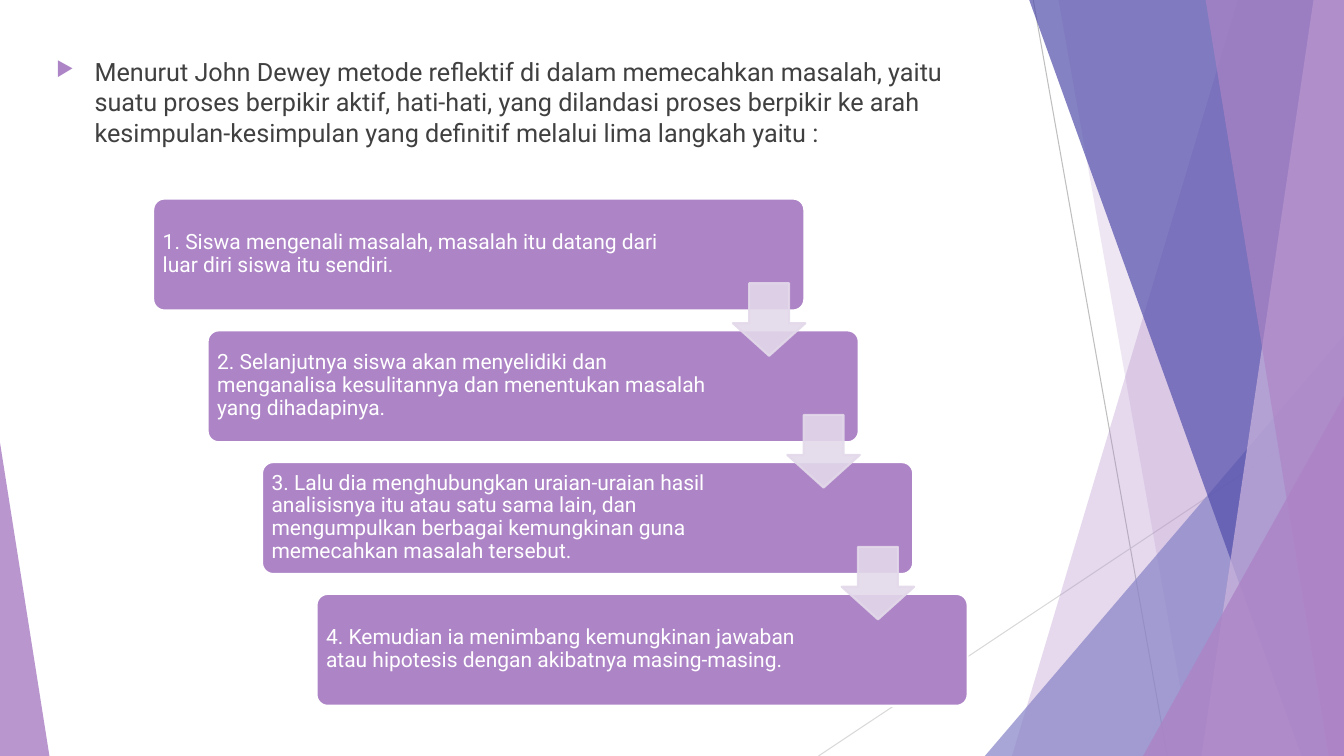
from dataclasses import dataclass

from lxml import etree
from pptx import Presentation
from pptx import util as u
from pptx.dml.color import RGBColor
from pptx.enum import shapes, text
from pptx.oxml.ns import qn

PURPLE = RGBColor(0xAD, 0x84, 0xC6)
PALE_PURPLE = RGBColor(0xCE, 0xB5, 0xDD)
PERIWINKLE = RGBColor(0x87, 0x84, 0xC7)
INDIGO = RGBColor(0x52, 0x4E, 0xAB)
LILAC = RGBColor(0xE3, 0xD9, 0xEA)
DARK_GRAY = RGBColor(0x40, 0x40, 0x40)
MID_GRAY = RGBColor(0xBF, 0xBF, 0xBF)
LIGHT_GRAY = RGBColor(0xD9, 0xD9, 0xD9)
WHITE = RGBColor(0xFF, 0xFF, 0xFF)
FONT = "Roboto"
WIDTH, HEIGHT = u.Inches(13.33), u.Inches(7.5)


@dataclass
class Box:
    """A rectangle in percent of the slide's width and height."""
    left: float
    top: float
    width: float
    height: float

    def moved(self, right: float, down: float) -> "Box":
        return Box(self.left + right, self.top + down, self.width, self.height)

    def emu(self) -> tuple:
        return (across(self.left), down_by(self.top),
                across(self.width), down_by(self.height))


@dataclass
class Band:
    """A facet reaching the right edge, with a slanted left side."""
    top_x: float
    bottom_x: float
    color: RGBColor
    opacity: int


@dataclass
class Corner:
    """A right triangle; the apex is 0 for the left side, 1 for the right."""
    box: Box
    apex: int
    color: RGBColor
    opacity: int


@dataclass
class Ray:
    start: tuple
    end: tuple
    color: RGBColor


RAYS = [
    Ray((76.88, 0), (86.85, 100), MID_GRAY),
    Ray((100, 53.73), (60.9, 100), LIGHT_GRAY),
]
FACETS = [
    Band(92.1, 75.3, PURPLE, 30),
    Band(78.75, 88.73, PURPLE, 20),
    Corner(Box(73.28, 44.4, 26.72, 55.6), 1, PERIWINKLE, 72),
    Band(76.58, 96.83, INDIGO, 70),
    Band(97.73, 89.4, PALE_PURPLE, 70),
    Band(89.7, 98.85, PURPLE, 65),
    Corner(Box(85.05, 52.4, 14.95, 47.6), 1, PURPLE, 80),
    Corner(Box(0, 58.53, 3.68, 41.47), 0, PURPLE, 85),
]
INTRO = ("Menurut John Dewey metode reflektif di dalam memecahkan masalah, yaitu "
         "suatu proses berpikir aktif, hati-hati, yang dilandasi proses berpikir ke arah "
         "kesimpulan-kesimpulan yang definitif melalui lima langkah yaitu :")
STEPS = [
    "1. Siswa mengenali masalah, masalah itu datang dari luar diri siswa itu sendiri.",
    "2. Selanjutnya siswa akan menyelidiki dan menganalisa kesulitannya dan "
    "menentukan masalah yang dihadapinya.",
    "3. Lalu dia menghubungkan uraian-uraian hasil analisisnya itu atau satu sama lain, "
    "dan mengumpulkan berbagai kemungkinan guna memecahkan masalah tersebut.",
    "4. Kemudian ia menimbang kemungkinan jawaban atau hipotesis dengan akibatnya "
    "masing-masing.",
]
INTRO_BOX = Box(3.45, 6.8, 70.5, 56.53)
CARD = Box(11.4, 26.27, 48.45, 14.8)
CARD_TEXT = Box(11.66, 26.67, 38.63, 13.87)
ARROW = Box(54.53, 37.47, 5.4, 9.6)
STEP_RIGHT, STEP_DOWN = 4.05, 17.43


def across(percent: float) -> int:
    return round(WIDTH * percent / 100)


def down_by(percent: float) -> int:
    return round(HEIGHT * percent / 100)


def paint(shape, color: RGBColor, opacity: int = 100, line: RGBColor = None) -> None:
    shape.shadow.inherit = False
    shape.fill.solid()
    shape.fill.fore_color.rgb = color
    if line is None:
        shape.line.fill.background()
    else:
        shape.line.color.rgb = line
        shape.line.width = u.Pt(1.5)
    if opacity < 100:
        for tint in shape._element.spPr.iter(qn("a:srgbClr")):
            etree.SubElement(tint, qn("a:alpha"), val=str(opacity * 1000))


def add_preset(slide, kind, box: Box, adjustments: list):
    shape = slide.shapes.add_shape(kind, *box.emu())
    for index, value in enumerate(adjustments):
        shape.adjustments[index] = value
    return shape


def add_ray(slide, ray: Ray) -> None:
    (x1, y1), (x2, y2) = ray.start, ray.end
    connector = slide.shapes.add_connector(
        shapes.MSO_CONNECTOR.STRAIGHT, across(x1), down_by(y1), across(x2), down_by(y2))
    connector.line.color.rgb = ray.color
    connector.line.width = u.Pt(0.75)
    etree.SubElement(connector._element.spPr, qn("a:effectLst"))


def add_facet(slide, facet) -> None:
    if isinstance(facet, Corner):
        shape = add_preset(slide, shapes.MSO_SHAPE.ISOSCELES_TRIANGLE, facet.box, [facet.apex])
    else:
        builder = slide.shapes.build_freeform(across(facet.top_x), 0)
        builder.add_line_segments(
            [(WIDTH, 0), (WIDTH, HEIGHT), (across(facet.bottom_x), HEIGHT)], close=True)
        shape = builder.convert_to_shape()
    paint(shape, facet.color, facet.opacity)


def add_text(slide, box: Box, words: str, size: int, color: RGBColor):
    text_frame = slide.shapes.add_textbox(*box.emu()).text_frame
    text_frame.word_wrap = True
    text_frame.text = words
    font = text_frame.paragraphs[0].runs[0].font
    font.name, font.size, font.color.rgb = FONT, u.Pt(size), color
    return text_frame


def add_intro(slide) -> None:
    paragraph = add_text(slide, INTRO_BOX, INTRO, 18, DARK_GRAY).paragraphs[0]
    paragraph.space_before = u.Pt(10)
    # Bullet with a hanging indent
    properties = paragraph._p.get_or_add_pPr()
    indent = u.Inches(0.38)
    properties.set("marL", str(indent))
    properties.set("indent", str(-indent))
    bullet_color = etree.SubElement(properties, qn("a:buClr"))
    etree.SubElement(bullet_color, qn("a:srgbClr"), val=str(PURPLE))
    etree.SubElement(properties, qn("a:buSzPct"), val="80000")
    etree.SubElement(properties, qn("a:buChar"), char="▶")


def add_step(slide, index: int, words: str) -> None:
    offset = index * STEP_RIGHT, index * STEP_DOWN
    card = add_preset(slide, shapes.MSO_SHAPE.ROUNDED_RECTANGLE, CARD.moved(*offset), [0.1])
    paint(card, PURPLE, line=WHITE)
    text_frame = add_text(slide, CARD_TEXT.moved(*offset), words, 15, WHITE)
    text_frame.vertical_anchor = text.MSO_ANCHOR.MIDDLE
    text_frame.margin_left = text_frame.margin_right = u.Inches(0.06)
    text_frame.margin_top = text_frame.margin_bottom = u.Inches(0.06)
    text_frame.paragraphs[0].line_spacing = 0.9


def add_arrow(slide, index: int) -> None:
    box = ARROW.moved(index * STEP_RIGHT, index * STEP_DOWN)
    arrow = add_preset(slide, shapes.MSO_SHAPE.DOWN_ARROW, box, [0.55, 0.45])
    paint(arrow, LILAC, 90, line=LILAC)


def main() -> None:
    presentation = Presentation()
    presentation.slide_width, presentation.slide_height = WIDTH, HEIGHT
    slide = presentation.slides.add_slide(presentation.slide_layouts[6])

    # Background decoration
    for ray in RAYS:
        add_ray(slide, ray)
    for facet in FACETS:
        add_facet(slide, facet)

    # Introduction and staircase of steps
    add_intro(slide)
    for index, words in enumerate(STEPS):
        add_step(slide, index, words)
    for index in range(len(STEPS) - 1):
        add_arrow(slide, index)

    presentation.save("out.pptx")


if __name__ == "__main__":
    main()
